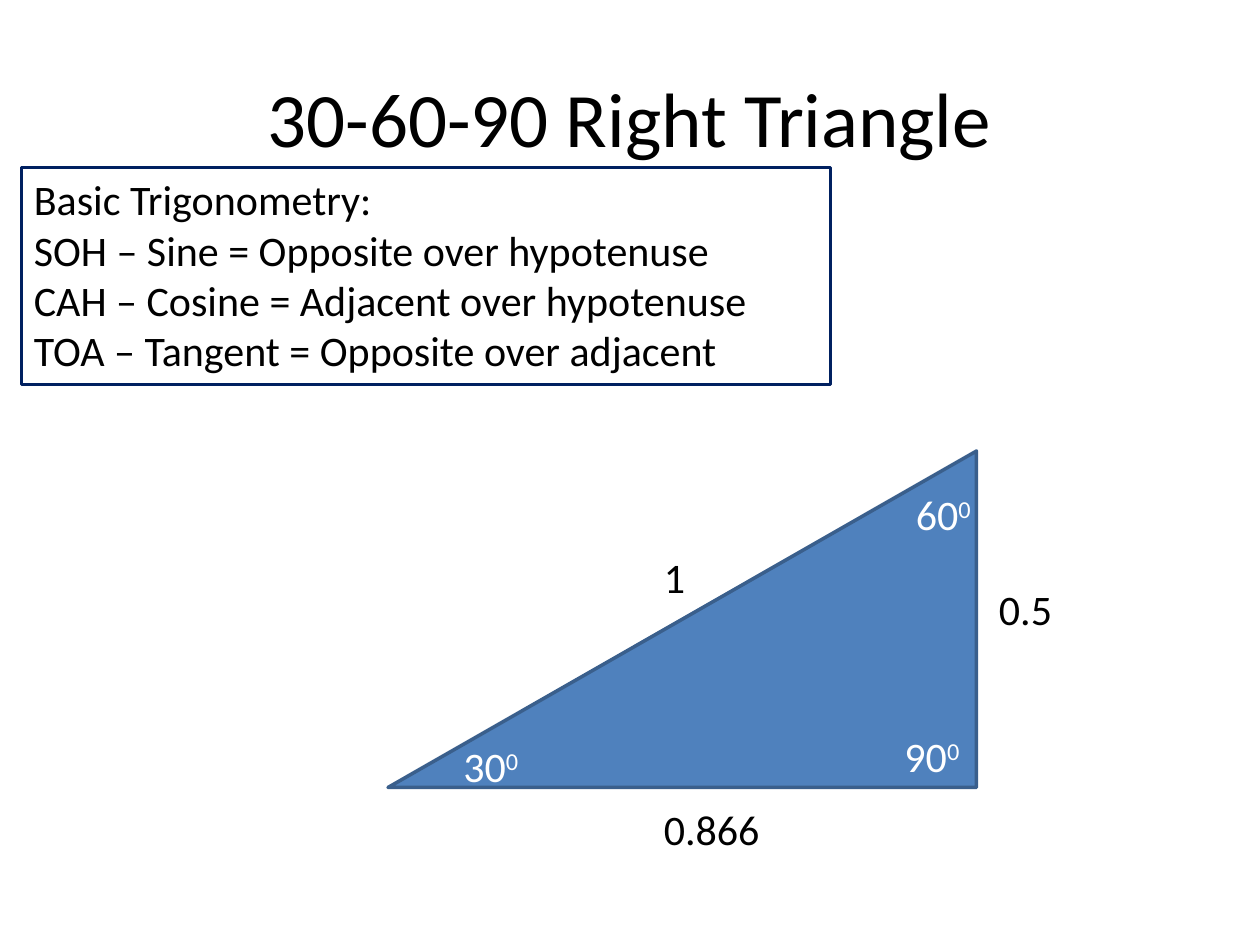
from dataclasses import dataclass

from pptx import Presentation
from pptx.dml.color import RGBColor
from pptx.enum.shapes import MSO_SHAPE
from pptx.enum.text import MSO_ANCHOR, MSO_AUTO_SIZE, PP_ALIGN
from pptx.slide import Slide
from pptx.text.text import Font
from pptx.util import Inches, Pt


@dataclass(frozen=True)
class Theme:
    font: str = "Calibri"
    title_size: int = 44
    body_size: int = 24
    black: RGBColor = RGBColor(0x00, 0x00, 0x00)
    white: RGBColor = RGBColor(0xFF, 0xFF, 0xFF)
    fill: RGBColor = RGBColor(0x4F, 0x81, 0xBD)
    edge: RGBColor = RGBColor(0x3A, 0x5F, 0x8C)
    frame: RGBColor = RGBColor(0x00, 0x20, 0x60)


@dataclass(frozen=True)
class Label:
    text: str
    left: float
    top: float
    width: float
    is_angle: bool = False


THEME = Theme()
LABEL_HEIGHT = 0.5
SIDES = [
    Label("1", 5.17, 4.33, 0.42),
    Label("0.866", 5.17, 6.33, 1.17),
    Label("0.5", 7.83, 4.58, 0.75),
]
ANGLES = [
    Label("90", 7.08, 5.75, 0.75, True),
    Label("30", 3.58, 5.83, 0.83, True),
    Label("60", 7.17, 3.83, 0.83, True),
]
RULES = [
    "Basic Trigonometry:",
    "SOH – Sine = Opposite over hypotenuse",
    "CAH – Cosine = Adjacent over hypotenuse",
    "TOA – Tangent = Opposite over adjacent",
]


def style(font: Font, size: int, color: RGBColor) -> None:
    font.name = THEME.font
    font.size = Pt(size)
    font.color.rgb = color


def add_title(slide: Slide, text: str) -> None:
    sp = slide.shapes.title
    sp.left, sp.top, sp.width, sp.height = map(Inches, (0.5, 0.3, 9, 1.25))
    tf = sp.text_frame
    tf.text = text
    tf.vertical_anchor = MSO_ANCHOR.MIDDLE
    p = tf.paragraphs[0]
    p.alignment = PP_ALIGN.CENTER
    style(p.font, THEME.title_size, THEME.black)


def add_triangle(slide: Slide) -> None:
    sp = slide.shapes.add_shape(
        MSO_SHAPE.ISOSCELES_TRIANGLE, *map(Inches, (3.08, 3.58, 4.67, 2.67))
    )
    sp.adjustments[0] = 1  # apex above the right corner
    sp.shadow.inherit = False
    sp.fill.solid()
    sp.fill.fore_color.rgb = THEME.fill
    sp.line.color.rgb = THEME.edge
    sp.line.width = Pt(2)


def add_label(slide: Slide, label: Label) -> None:
    """Add a side length, or an angle with a raised 0 as its degree sign."""
    sp = slide.shapes.add_textbox(
        *map(Inches, (label.left, label.top, label.width, LABEL_HEIGHT))
    )
    tf = sp.text_frame
    tf.word_wrap = True
    tf.auto_size = MSO_AUTO_SIZE.SHAPE_TO_FIT_TEXT
    p = tf.paragraphs[0]
    p.add_run().text = label.text
    style(p.font, THEME.body_size, THEME.white if label.is_angle else THEME.black)
    if label.is_angle:
        r = p.add_run()
        r.text = "0"
        r.font._element.set("baseline", "30000")


def add_rules(slide: Slide) -> None:
    sp = slide.shapes.add_textbox(*map(Inches, (0.17, 1.33, 6.42, 1.72)))
    sp.line.color.rgb = THEME.frame
    sp.line.width = Pt(1.5)
    tf = sp.text_frame
    tf.word_wrap = True
    tf.auto_size = MSO_AUTO_SIZE.SHAPE_TO_FIT_TEXT
    tf.text = "\n".join(RULES)
    for p in tf.paragraphs:
        style(p.font, THEME.body_size, THEME.black)


def main() -> None:
    prs = Presentation()
    prs.slide_width, prs.slide_height = Inches(10), Inches(7.5)
    slide = prs.slides.add_slide(prs.slide_layouts[5])
    add_title(slide, "30-60-90 Right Triangle")
    add_triangle(slide)
    for label in SIDES + ANGLES:
        add_label(slide, label)
    add_rules(slide)
    prs.save("out.pptx")


if __name__ == "__main__":
    main()
